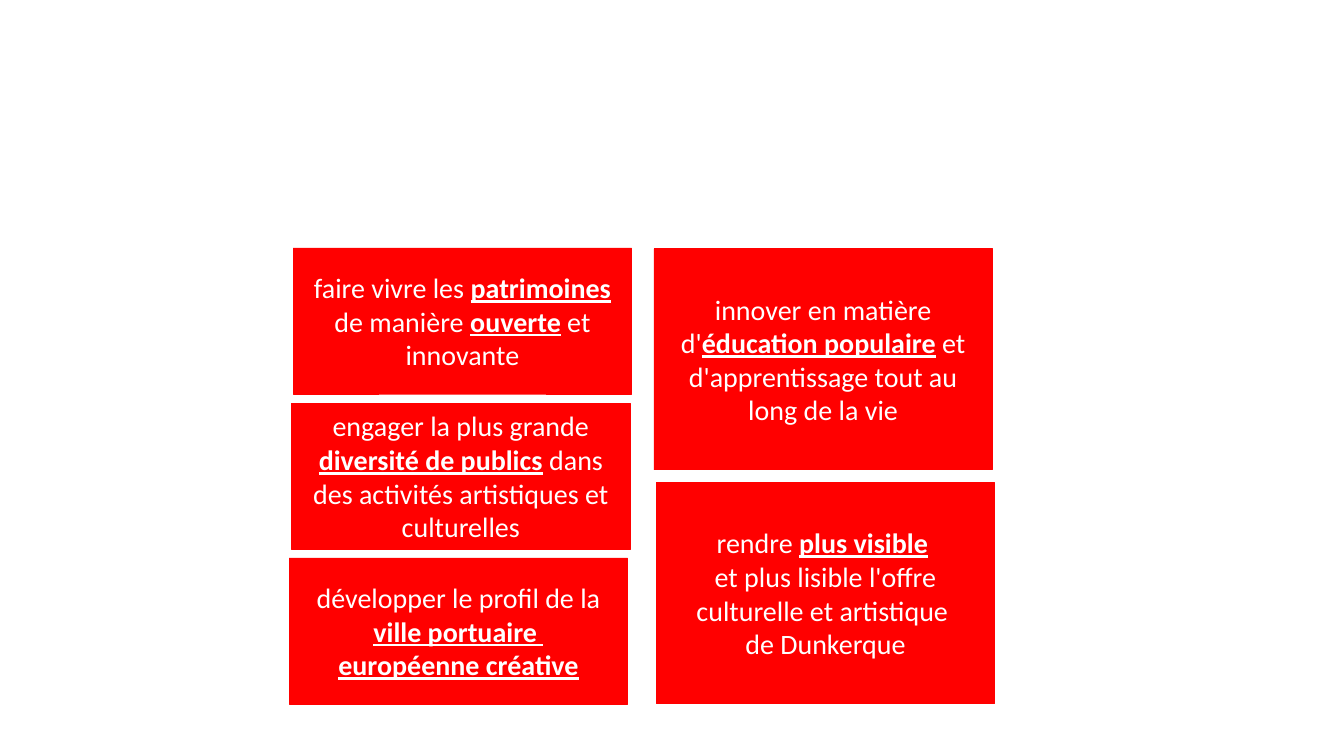
from dataclasses import dataclass

from pptx import Presentation
from pptx.dml.color import RGBColor
from pptx.enum.shapes import MSO_SHAPE
from pptx.enum.text import MSO_ANCHOR, PP_ALIGN
from pptx.util import Cm, Pt

RECTANGLE = MSO_SHAPE.RECTANGLE
MIDDLE = MSO_ANCHOR.MIDDLE
CENTER = PP_ALIGN.CENTER
BLANK_LAYOUT = 6


@dataclass(frozen=True)
class Theme:
    box: RGBColor = RGBColor(0xFF, 0x00, 0x00)
    text: RGBColor = RGBColor(0xFF, 0xFF, 0xFF)
    font: str = "Calibri"
    size: Pt = Pt(20)
    outline: Pt = Pt(0.5)


THEME = Theme()
BOX_WIDTH = 8.53
LEFT_HEIGHT = 3.68
RIGHT_HEIGHT = 5.57

# Each goal: left, top, height in cm, then paragraphs of (text, emphasised) runs.
GOALS = [
    (7.39, 6.25, LEFT_HEIGHT, [
        [("faire vivre les ", False), ("patrimoines", True), (" de manière ", False),
         ("ouverte", True), (" et innovante", False)],
    ]),
    (7.35, 10.16, LEFT_HEIGHT, [
        [("engager la plus grande ", False), ("diversité de publics", True),
         (" dans des activités artistiques et culturelles", False)],
    ]),
    (7.29, 14.06, LEFT_HEIGHT, [
        [("développer le profil de la ", False), ("ville portuaire ", True)],
        [("européenne créative", True)],
    ]),
    (16.48, 6.27, RIGHT_HEIGHT, [
        [("innover en matière d'", False), ("éducation populaire", True),
         (" et d'apprentissage tout au long de la vie", False)],
    ]),
    (16.54, 12.16, RIGHT_HEIGHT, [
        [("rendre ", False), ("plus visible", True), (" ", False)],
        [("et plus lisible l'offre culturelle et artistique ", False)],
        [("de Dunkerque", False)],
    ]),
]

presentation = Presentation()
presentation.slide_width = Cm(33.87)
presentation.slide_height = Cm(19.05)
slide = presentation.slides.add_slide(presentation.slide_layouts[BLANK_LAYOUT])

for left, top, height, paragraphs in GOALS:
    box = slide.shapes.add_shape(RECTANGLE, Cm(left), Cm(top), Cm(BOX_WIDTH), Cm(height))
    box.shadow.inherit = False
    box.fill.solid()
    box.fill.fore_color.rgb = THEME.box
    box.line.color.rgb = THEME.box
    box.line.width = THEME.outline

    text_frame = box.text_frame
    text_frame.word_wrap = True
    text_frame.vertical_anchor = MIDDLE
    for index, runs in enumerate(paragraphs):
        paragraph = text_frame.add_paragraph() if index else text_frame.paragraphs[0]
        paragraph.alignment = CENTER
        for text, emphasised in runs:
            run = paragraph.add_run()
            run.text = text
            run.font.name = THEME.font
            run.font.size = THEME.size
            run.font.color.rgb = THEME.text
            run.font.bold = emphasised
            run.font.underline = emphasised

presentation.save("out.pptx")
